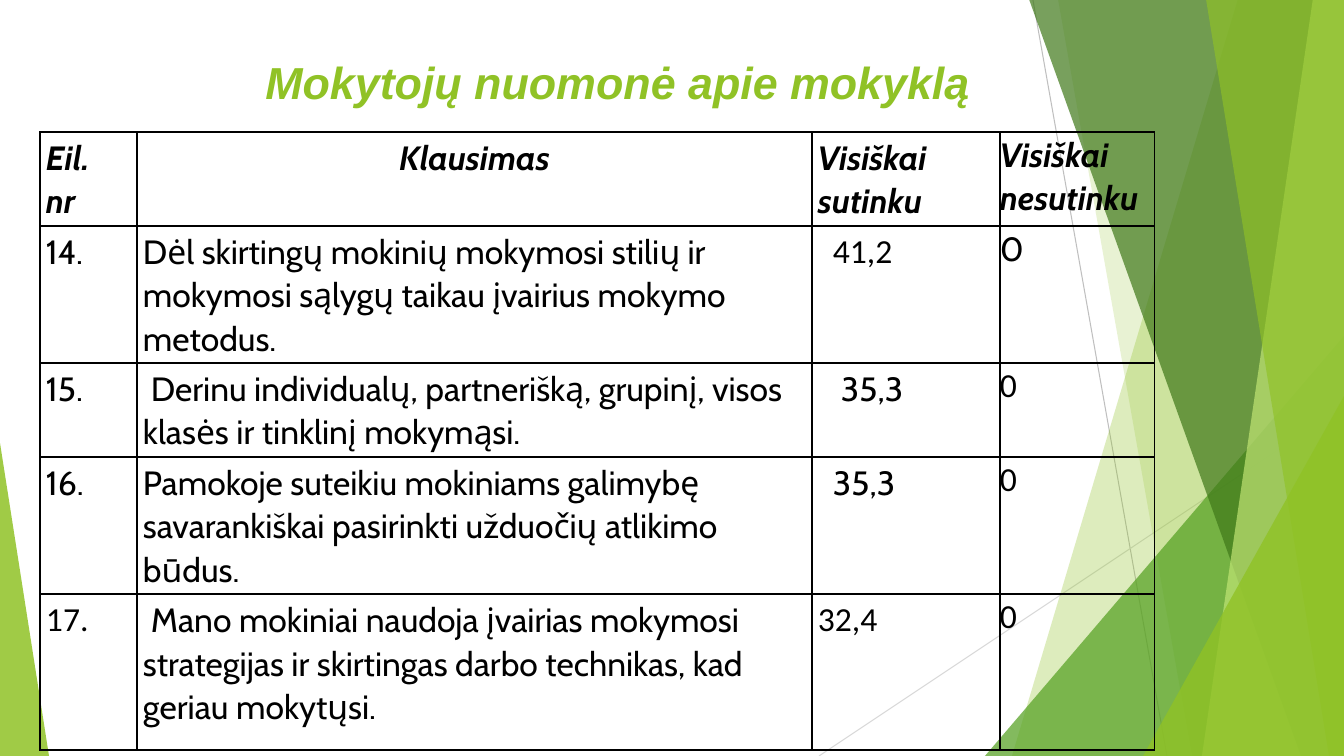
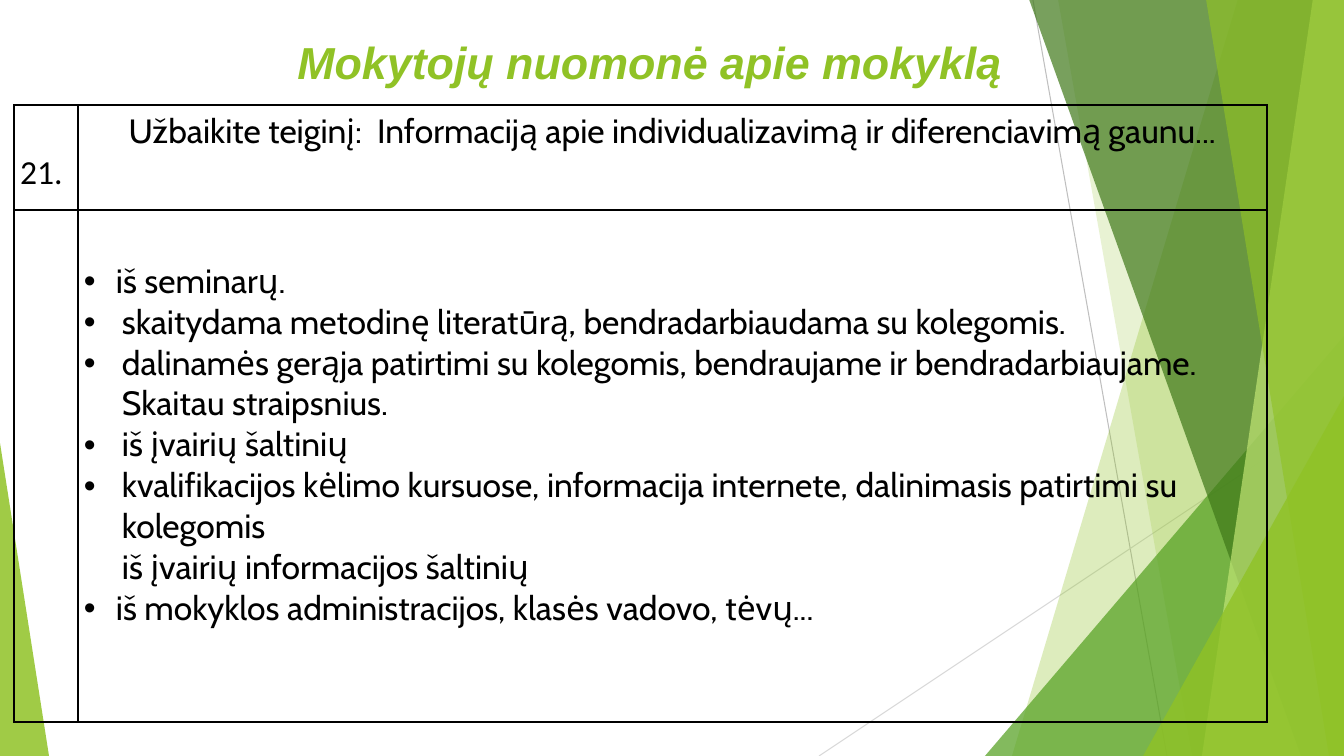
from lxml import etree
from pptx import Presentation
from pptx.dml.color import RGBColor
from pptx.enum.shapes import MSO_CONNECTOR, MSO_SHAPE
from pptx.enum.text import MSO_ANCHOR, MSO_AUTO_SIZE, PP_ALIGN
from pptx.oxml.ns import qn
from pptx.util import Pt

LEFT, CENTER = PP_ALIGN.LEFT, PP_ALIGN.CENTER
TOP, NO_FIT = MSO_ANCHOR.TOP, MSO_AUTO_SIZE.NONE
STRAIGHT, TRIANGLE = MSO_CONNECTOR.STRAIGHT, MSO_SHAPE.ISOSCELES_TRIANGLE

# Style
SCALE = 914400 / 100.8
WIDTH, HEIGHT = 1344, 756
LIME = RGBColor(0x90, 0xC2, 0x26)
GREEN = RGBColor(0x54, 0xA0, 0x21)
FOREST = RGBColor(0x3F, 0x78, 0x19)
PALE_LIME = RGBColor(0xC0, 0xE4, 0x74)
GRAY = RGBColor(0xBF, 0xBF, 0xBF)
LIGHT_GRAY = RGBColor(0xD9, 0xD9, 0xD9)
BLACK = RGBColor(0, 0, 0)
HEADING_FONT, BODY_FONT, NUMBER_FONT = "Arial", "Cabin", "Calibri"
CELL_INSETS = (6, 3, 6, 3)
NO_INSETS = (0, 0, 0, 0)


def px(length):
    return round(length * SCALE)


def write(paragraph, text, *, size=24, font=BODY_FONT, color=BLACK, bold=False,
          italic=False, align=LEFT, spacing=1.07, indent=0, hanging=0):
    """Fill one paragraph; hanging adds a bullet with a hanging indent."""
    paragraph.text = text
    paragraph.alignment = align
    paragraph.line_spacing = spacing
    for run in paragraph.runs:
        run.font.size = Pt(size)
        run.font.name = font
        run.font.bold = bold
        run.font.italic = italic
        run.font.color.rgb = color
    properties = paragraph._p.get_or_add_pPr()
    properties.set("marL", str(px(hanging)))
    properties.set("indent", str(px(indent - hanging)))
    if hanging:
        etree.SubElement(properties, qn("a:buFont"), typeface=HEADING_FONT)
        etree.SubElement(properties, qn("a:buChar"), char="•")


class Deck:
    def __init__(self):
        self.presentation = Presentation()
        self.presentation.slide_width = px(WIDTH)
        self.presentation.slide_height = px(HEIGHT)
        self.layout = self.presentation.slide_layouts[5]
        self.slide = None

    def add_slide(self):
        self.slide = self.presentation.slides.add_slide(self.layout)

    def title(self, text, left, top):
        heading = self.slide.shapes.title
        heading.left, heading.top = px(left), px(top)
        heading.width, heading.height = px(1172), px(70)
        frame = heading.text_frame
        frame.auto_size = NO_FIT
        frame.vertical_anchor = TOP
        frame.margin_top = frame.margin_bottom = px(5)
        write(frame.paragraphs[0], text, size=32, font=HEADING_FONT, color=LIME,
              bold=True, italic=True, align=CENTER, spacing=1.0)

    # Backdrop elements
    def line(self, x1, y1, x2, y2, color):
        ray = self.slide.shapes.add_connector(
            STRAIGHT, px(x1), px(y1), px(x2), px(y2))
        ray.line.color.rgb = color
        ray.line.width = Pt(0.75)
        etree.SubElement(ray.element.spPr, qn("a:effectLst"))

    def tint(self, shape, color, opacity):
        shape.shadow.inherit = False
        shape.line.fill.background()
        shape.fill.solid()
        shape.fill.fore_color.rgb = color
        tone = shape.element.xpath("./p:spPr/a:solidFill/a:srgbClr")[0]
        etree.SubElement(tone, qn("a:alpha"), val=str(opacity * 1000))

    def shard(self, top_x, bottom_x, color, opacity):
        """Area from a slanted edge to the right side of the slide."""
        outline = self.slide.shapes.build_freeform(top_x, -1, scale=SCALE)
        outline.add_line_segments(
            [(WIDTH, -1), (WIDTH, HEIGHT), (bottom_x, HEIGHT)], close=True)
        self.tint(outline.convert_to_shape(), color, opacity)

    def corner(self, left, top, width, apex, color, opacity):
        """Triangle that stands on the bottom edge of the slide."""
        wedge = self.slide.shapes.add_shape(
            TRIANGLE, px(left), px(top), px(width), px(HEIGHT - top))
        wedge.adjustments[0] = apex
        self.tint(wedge, color, opacity)

    def backdrop(self):
        """Draw the facets, then hand them to the shared layout."""
        self.line(1033, 0, 1167, HEIGHT, GRAY)
        self.line(WIDTH, 406, 819, HEIGHT, LIGHT_GRAY)
        self.shard(1238, 1012, LIME, 30)
        self.shard(1058, 1192, LIME, 20)
        self.corner(985, 336, 359, 1, GREEN, 72)
        self.shard(1029, 1301, FOREST, 70)
        self.shard(1313, 1202, PALE_LIME, 70)
        self.shard(1206, 1329, LIME, 65)
        self.corner(1143, 396, 201, 1, LIME, 80)
        self.corner(0, 443, 49, 0, LIME, 85)
        facets = [s for s in self.slide.shapes if not s.is_placeholder]
        for number, facet in enumerate(facets, start=100):
            facet.element.xpath(".//p:cNvPr")[0].set("id", str(number))
            self.layout.shapes.element.append(facet.element)

    # Tables
    def table(self, left, top, columns, rows):
        grid = self.slide.shapes.add_table(
            len(rows), len(columns), px(left), px(top),
            px(sum(columns)), px(sum(rows))).table
        grid.first_row = grid.horz_banding = False
        for column, width in zip(grid.columns, columns):
            column.width = px(width)
        for row, height in zip(grid.rows, rows):
            row.height = px(height)
        for cell in grid.iter_cells():
            self.border(cell)
            cell.fill.background()
        return grid

    def border(self, cell):
        properties = cell._tc.get_or_add_tcPr()
        for side in ("a:lnL", "a:lnR", "a:lnT", "a:lnB"):
            edge = etree.SubElement(properties, qn(side), w=str(Pt(1)))
            fill = etree.SubElement(edge, qn("a:solidFill"))
            etree.SubElement(fill, qn("a:srgbClr"), val=str(BLACK))

    def cell(self, cell, *paragraphs, insets=CELL_INSETS, **style):
        """Each paragraph is a text or a (text, extra format) pair."""
        (cell.margin_left, cell.margin_top,
         cell.margin_right, cell.margin_bottom) = map(px, insets)
        frame = cell.text_frame
        for index, item in enumerate(paragraphs):
            text, extra = (item, {}) if isinstance(item, str) else item
            paragraph = frame.add_paragraph() if index else frame.paragraphs[0]
            write(paragraph, text, **{**style, **extra})


TITLE = "Mokytojų nuomonė apie mokyklą"
HEADERS = [("Eil.", "nr"), ("Klausimas",), ("Visiškai sutinku",),
           ("Visiškai nesutinku",)]
NUMERIC = {"font": NUMBER_FONT}
# Number, question, agree, disagree
ANSWERS = [
    ("14.",
     "Dėl skirtingų mokinių mokymosi stilių ir mokymosi sąlygų taikau "
     "įvairius mokymo metodus.",
     ("41,2", {"font": NUMBER_FONT, "indent": 15}), "0"),
    ("15.",
     ("Derinu individualų, partnerišką, grupinį, visos klasės ir tinklinį "
      "mokymąsi.", {"indent": 8}),
     ("35,3", {"indent": 23}), ("0", NUMERIC)),
    ("16.",
     "Pamokoje suteikiu mokiniams galimybę savarankiškai pasirinkti užduočių "
     "atlikimo būdus.",
     ("35,3", {"indent": 15}), ("0", NUMERIC)),
    (("17.", NUMERIC),
     ("Mano mokiniai naudoja įvairias mokymosi strategijas ir skirtingas darbo "
      "technikas, kad geriau mokytųsi.", {"indent": 8}),
     ("32,4", NUMERIC), ("0", NUMERIC)),
]
# Text, hanging indent
SOURCES = [
    ("iš seminarų.", 32),
    ("skaitydama metodinę literatūrą, bendradarbiaudama su kolegomis.", 38),
    ("dalinamės gerąja patirtimi su kolegomis, bendraujame ir "
     "bendradarbiaujame. Skaitau straipsnius.", 38),
    ("iš įvairių šaltinių", 38),
    ("kvalifikacijos kėlimo kursuose, informacija internete, dalinimasis "
     "patirtimi su kolegomis\viš įvairių informacijos šaltinių", 38),
    ("iš mokyklos administracijos, klasės vadovo, tėvų...", 32),
]


def survey_slide(deck):
    deck.title(TITLE, 32, 50)
    survey = deck.table(40, 132, [97, 675, 188, 155], [94, 137, 94, 137, 156])
    column_insets = [CELL_INSETS] * 3 + [NO_INSETS]
    for column, insets in enumerate(column_insets):
        deck.cell(survey.cell(0, column), *HEADERS[column], insets=insets,
                  bold=True, italic=True, align=CENTER if column == 1 else LEFT)
        for row, answer in enumerate(ANSWERS, start=1):
            deck.cell(survey.cell(row, column), answer[column], insets=insets)


def sources_slide(deck):
    deck.title(TITLE, 64, 30)
    sources = deck.table(14, 105, [64, 1189], [105, 512])
    deck.cell(sources.cell(0, 0), "21.", insets=(6, 45, 6, 3), font=NUMBER_FONT)
    deck.cell(sources.cell(0, 1),
              "Užbaikite teiginį:  Informaciją apie individualizavimą ir "
              "diferenciavimą gaunu...", align=CENTER)
    deck.cell(sources.cell(1, 1),
              *[(text, {"hanging": hanging}) for text, hanging in SOURCES],
              insets=(6, 51, 6, 3), spacing=1.0)


def main():
    deck = Deck()
    deck.add_slide()
    deck.backdrop()
    survey_slide(deck)
    deck.add_slide()
    sources_slide(deck)
    deck.presentation.save("out.pptx")


if __name__ == "__main__":
    main()
